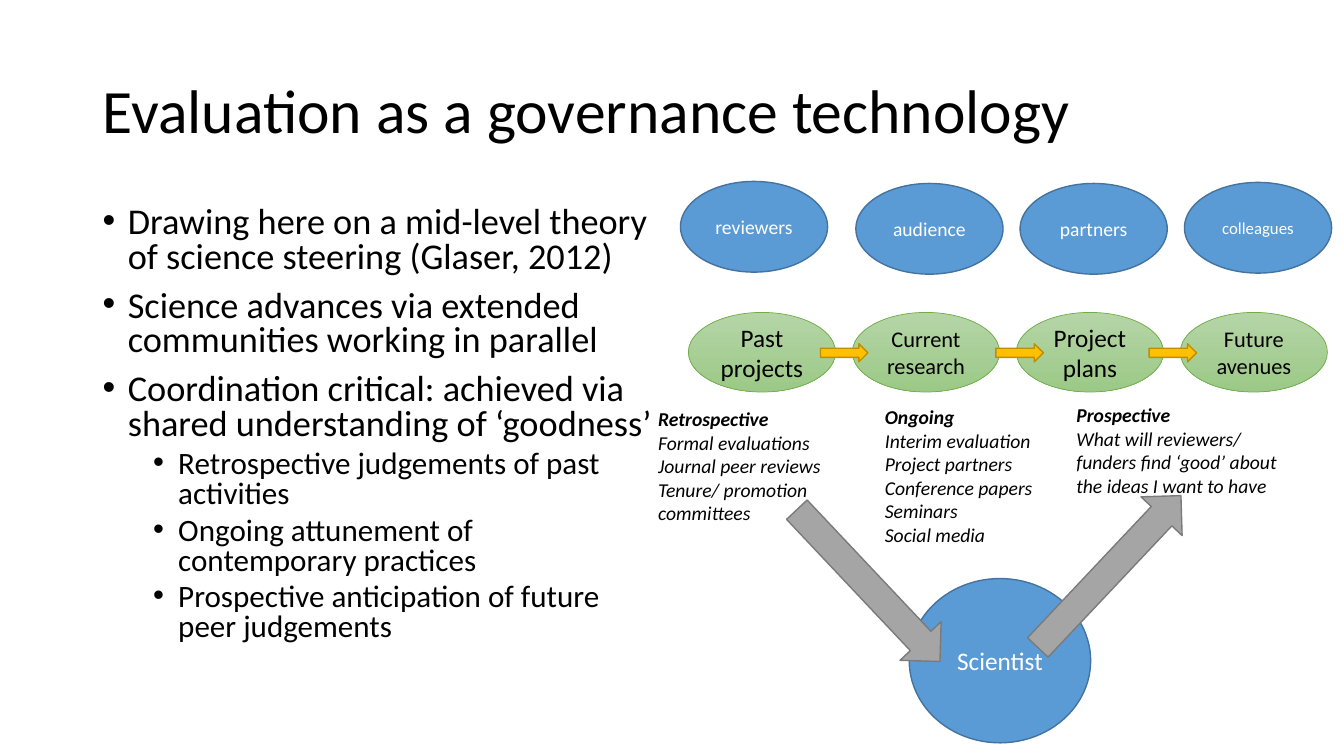
from lxml.etree import SubElement
from pptx import Presentation
from pptx.dml.color import RGBColor
from pptx.enum.shapes import MSO_SHAPE as SHAPE
from pptx.enum.text import MSO_ANCHOR as ANCHOR, PP_ALIGN as ALIGN
from pptx.oxml.ns import qn
from pptx.util import Inches, Pt

FONT = "Calibri"
BLACK = RGBColor(0x00, 0x00, 0x00)
WHITE = RGBColor(0xFF, 0xFF, 0xFF)
BLUE, BLUE_EDGE = RGBColor(0x5B, 0x9B, 0xD5), RGBColor(0x43, 0x73, 0x9E)
GREEN_TOP, GREEN_BOTTOM = RGBColor(0xB5, 0xD5, 0xA7), RGBColor(0x9C, 0xC9, 0x87)
GREEN_EDGE = RGBColor(0x70, 0xAD, 0x47)
GOLD, GOLD_EDGE = RGBColor(0xFF, 0xC0, 0x00), RGBColor(0xBD, 0x8E, 0x00)
GREY, GREY_EDGE = RGBColor(0xA5, 0xA5, 0xA5), RGBColor(0x7A, 0x7A, 0x7A)

WIDTH, HEIGHT = Inches(13.33), Inches(7.5)

# Left edge, top and size in percent of the slide; text sizes in points
OVAL_WIDTH = 10.95
COMMUNITY = [("reviewers", 50.63, 24, 14), ("audience", 63.68, 24.27, 14),
             ("partners", 75.9, 24.27, 14), ("colleagues", 88.13, 24.13, 12)]
STAGES = [("Past projects", 18), ("Current research", 16),
          ("Project plans", 18), ("Future avenues", 16)]
STAGE_LEFT, STAGE_STEP = 51.22, 12.2
STEP_ARROWS = [61.05, 74.1, 85.5]
JUDGEMENT_ARROWS = [(56.85, 73.73, 46.7), (74.78, 71.87, 313.3)]

POINTS = [
    (0, "Drawing here on a mid-level theory of science steering (Glaser, 2012)"),
    (0, "Science advances via extended communities working in parallel"),
    (0, "Coordination critical: achieved via shared understanding of ‘goodness’"),
    (1, "Retrospective judgements of past activities"),
    (1, "Ongoing attunement of contemporary practices"),
    (1, "Prospective anticipation of future peer judgements"),
]
# Per level: text size, space before, left margin in inches
POINT_STYLES = [(25.9, 10, 0.25), (22.2, 5, 0.75)]

RETROSPECTIVE = ["Retrospective", "Formal evaluations", "Journal peer reviews",
                 "Tenure/ promotion committees"]
ONGOING = ["Ongoing", "Interim evaluation", "Project partners",
           "Conference papers", "Seminars", "Social media"]
PROSPECTIVE = ["Prospective", "What will reviewers/ funders find ‘good’ about "
               "the ideas I want to have"]


def area(left, top, width, height):
    """Turn percentages of the slide into lengths."""
    return (int(WIDTH * left / 100), int(HEIGHT * top / 100),
            int(WIDTH * width / 100), int(HEIGHT * height / 100))


def style(paragraph, size, color=BLACK, bold=False, italic=False):
    for run in paragraph.runs:
        font = run.font
        font.name, font.size, font.color.rgb = FONT, Pt(size), color
        font.bold, font.italic = bold, italic


def add_text(slide, place, lines):
    frame = slide.shapes.add_textbox(*area(*place)).text_frame
    frame.word_wrap = True
    frame.text = "\n".join(lines)
    return frame


def add_title(slide, title):
    frame = add_text(slide, (6.9, 5.33, 86.25, 19.33), [title])
    frame.vertical_anchor = ANCHOR.MIDDLE
    frame.paragraphs[0].line_spacing = 0.9
    style(frame.paragraphs[0], 44)


def add_points(slide):
    frame = add_text(slide, (6.9, 26.67, 42.5, 63.5), [text for _, text in POINTS])
    for paragraph, (level, _) in zip(frame.paragraphs, POINTS):
        size, before, margin = POINT_STYLES[level]
        paragraph.level = level
        paragraph.line_spacing = 0.8
        paragraph.space_before = Pt(before)
        style(paragraph, size)
        # Hanging bullet
        properties = paragraph._p.get_or_add_pPr()
        properties.set("marL", str(Inches(margin)))
        properties.set("indent", str(-Inches(0.25)))
        SubElement(properties, qn("a:buFont")).set("typeface", "Arial")
        SubElement(properties, qn("a:buChar")).set("char", "•")


def add_judgement(slide, place, lines):
    frame = add_text(slide, place, lines)
    for index, paragraph in enumerate(frame.paragraphs):
        style(paragraph, 14, bold=index == 0, italic=True)


def add_figure(slide, kind, place, fill, edge, edge_width=1):
    figure = slide.shapes.add_shape(kind, *area(*place))
    figure.shadow.inherit = False
    figure.line.color.rgb, figure.line.width = edge, Pt(edge_width)
    if isinstance(fill, RGBColor):
        figure.fill.solid()
        figure.fill.fore_color.rgb = fill
    else:
        figure.fill.gradient()
        figure.fill.gradient_angle = 270
        for stop, color in zip(figure.fill.gradient_stops, fill):
            stop.color.rgb = color
    return figure


def add_oval(slide, label, place, size, fill=BLUE, edge=BLUE_EDGE,
             edge_width=1, color=WHITE):
    oval = add_figure(slide, SHAPE.OVAL, place, fill, edge, edge_width)
    frame = oval.text_frame
    frame.text = label
    frame.word_wrap = True
    frame.vertical_anchor = ANCHOR.MIDDLE
    frame.paragraphs[0].alignment = ALIGN.CENTER
    style(frame.paragraphs[0], size, color)


def main():
    deck = Presentation()
    deck.slide_width, deck.slide_height = WIDTH, HEIGHT
    slide = deck.slides.add_slide(deck.slide_layouts[6])

    # Argument on the left
    add_title(slide, "Evaluation as a governance technology")
    add_points(slide)

    # Scientist and the stages of research
    add_oval(slide, "Scientist", (67.65, 76.53, 13.5, 21.73), 18)
    for index, (stage, size) in enumerate(STAGES):
        left = STAGE_LEFT + index * STAGE_STEP
        add_oval(slide, stage, (left, 41.33, OVAL_WIDTH, 10.53), size,
                 (GREEN_TOP, GREEN_BOTTOM), GREEN_EDGE, 0.5, BLACK)
    for left in STEP_ARROWS:
        add_figure(slide, SHAPE.RIGHT_ARROW, (left, 45.47, 3.53, 2.4), GOLD, GOLD_EDGE)

    # Judgements passed to and from the scientist
    add_judgement(slide, (48.23, 53.2, 18.08, 17.07), RETROSPECTIVE)
    add_judgement(slide, (65.1, 52.93, 18.08, 20.13), ONGOING)
    for left, top, angle in JUDGEMENT_ARROWS:
        arrow = add_figure(slide, SHAPE.RIGHT_ARROW, (left, top, 15.53, 7.47),
                           GREY, GREY_EDGE)
        arrow.rotation = angle
    add_judgement(slide, (79.35, 52.67, 18.08, 13.87), PROSPECTIVE)

    # Community around the research
    for member, left, top, size in COMMUNITY:
        add_oval(slide, member, (left, top, OVAL_WIDTH, 12), size)

    deck.save("out.pptx")


if __name__ == "__main__":
    main()
